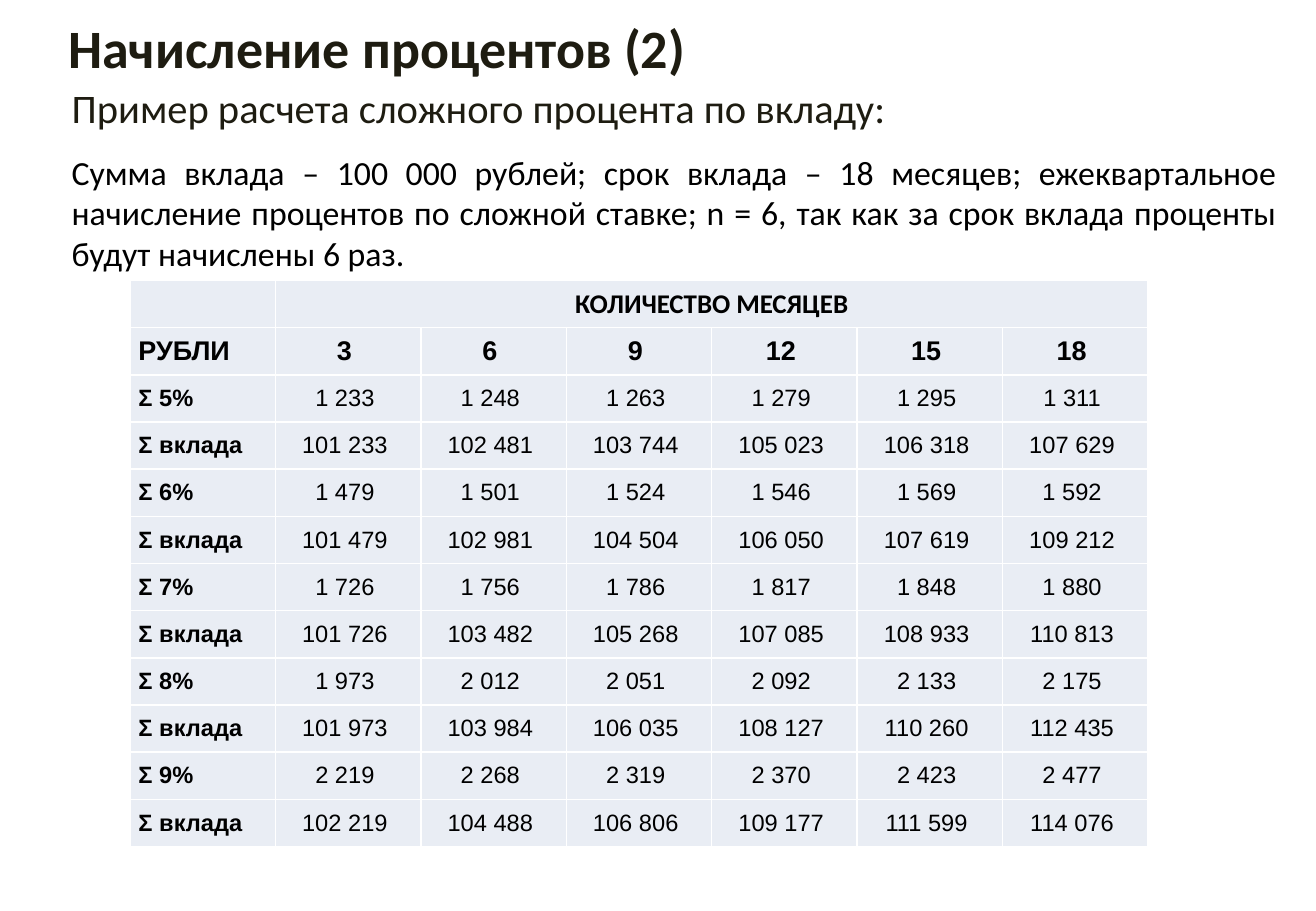
from lxml import etree
from pptx import Presentation
from pptx import util as u
from pptx.dml.color import RGBColor
from pptx.enum import text
from pptx.oxml import ns

HEADING_COLOR = "1E1C11"
BLACK = "000000"
CELL_FILL = "E9EDF4"
BORDER_COLOR = "FFFFFF"
COLUMN_WIDTH = 8.38 / 7
ROW_HEIGHT = 4.66 / 12

MONTHS = ["3", "6", "9", "12", "15", "18"]
RATES = [
    ("5%", ["1 233", "1 248", "1 263", "1 279", "1 295", "1 311"],
     ["101 233", "102 481", "103 744", "105 023", "106 318", "107 629"]),
    ("6%", ["1 479", "1 501", "1 524", "1 546", "1 569", "1 592"],
     ["101 479", "102 981", "104 504", "106 050", "107 619", "109 212"]),
    ("7%", ["1 726", "1 756", "1 786", "1 817", "1 848", "1 880"],
     ["101 726", "103 482", "105 268", "107 085", "108 933", "110 813"]),
    ("8%", ["1 973", "2 012", "2 051", "2 092", "2 133", "2 175"],
     ["101 973", "103 984", "106 035", "108 127", "110 260", "112 435"]),
    ("9%", ["2 219", "2 268", "2 319", "2 370", "2 423", "2 477"],
     ["102 219", "104 488", "106 806", "109 177", "111 599", "114 076"]),
]
CONDITIONS = (
    "Сумма вклада – 100 000 рублей; срок вклада – 18 месяцев; ежеквартальное "
    "начисление процентов по сложной ставке; n = 6, так как за срок вклада "
    "проценты будут начислены 6 раз."
)


def color(hex_value):
    return RGBColor.from_string(hex_value)


def place(shape, left, top, width, height):
    shape.left, shape.top = u.Inches(left), u.Inches(top)
    shape.width, shape.height = u.Inches(width), u.Inches(height)


def set_font(paragraph, name, size, hex_value, bold=False):
    font = paragraph.font
    font.name, font.size, font.bold = name, u.Pt(size), bold
    font.color.rgb = color(hex_value)


def remove_bullet(paragraph):
    properties = paragraph._p.get_or_add_pPr()
    properties.set("marL", "0")
    properties.set("indent", "0")
    etree.SubElement(properties, ns.qn("a:buNone"))


def add_title(slide):
    title = slide.shapes.title
    place(title, 0.46, 0.13, 10.37, 0.57)
    frame = title.text_frame
    frame.text = "Начисление процентов (2)"
    frame.auto_size = text.MSO_AUTO_SIZE.NONE
    frame.vertical_anchor = text.MSO_ANCHOR.TOP
    paragraph = frame.paragraphs[0]
    paragraph.alignment = text.PP_ALIGN.LEFT
    paragraph.line_spacing = 0.9
    paragraph.space_before = u.Pt(10)
    set_font(paragraph, "Calibri", 32, HEADING_COLOR, True)


def add_body(slide):
    body = slide.placeholders[1]
    place(body, 0.49, 0.63, 10.12, 6.36)
    frame = body.text_frame
    frame.text = "Пример расчета сложного процента по вкладу:\n" + CONDITIONS
    frame.auto_size = text.MSO_AUTO_SIZE.NONE
    styles = [(24, HEADING_COLOR), (20, BLACK)]
    for paragraph, (size, hex_value) in zip(frame.paragraphs, styles):
        paragraph.alignment = text.PP_ALIGN.JUSTIFY
        paragraph.space_before = paragraph.space_after = u.Pt(6)
        remove_bullet(paragraph)
        set_font(paragraph, "Calibri", size, hex_value)


def add_borders(cell):
    properties = cell._tc.get_or_add_tcPr()
    for side in ("a:lnL", "a:lnR", "a:lnT", "a:lnB"):
        line = etree.SubElement(properties, ns.qn(side), w=str(u.Pt(1)))
        fill = etree.SubElement(line, ns.qn("a:solidFill"))
        etree.SubElement(fill, ns.qn("a:srgbClr"), val=BORDER_COLOR)


def format_cell(cell, row, column):
    add_borders(cell)
    cell.fill.solid()
    cell.fill.fore_color.rgb = color(CELL_FILL)
    cell.margin_left = cell.margin_right = u.Inches(0.07)
    cell.margin_top = cell.margin_bottom = 0
    cell.vertical_anchor = text.MSO_ANCHOR.MIDDLE
    paragraph = cell.text_frame.paragraphs[0]
    paragraph.alignment = text.PP_ALIGN.CENTER if column else text.PP_ALIGN.LEFT
    name = "Arial" if row else "Calibri"
    set_font(paragraph, name, 16 if row < 2 else 14, BLACK, row < 2 or column == 0)


def add_interest_table(slide):
    rows = [["РУБЛИ"] + MONTHS]
    for rate, interest, deposit in RATES:
        rows += [[f"Σ {rate}"] + interest, ["Σ вклада"] + deposit]
    row_count, column_count = len(rows) + 1, len(MONTHS) + 1
    table = slide.shapes.add_table(
        row_count, column_count, u.Inches(1.07), u.Inches(2.31),
        u.Inches(COLUMN_WIDTH * column_count), u.Inches(ROW_HEIGHT * row_count),
    ).table
    table.cell(0, 1).merge(table.cell(0, column_count - 1))
    table.cell(0, 1).text = "КОЛИЧЕСТВО МЕСЯЦЕВ"
    for row, values in enumerate(rows, 1):
        for column, value in enumerate(values):
            table.cell(row, column).text = f"{value} " if column else value
    for row in range(row_count):
        for column in range(column_count):
            format_cell(table.cell(row, column), row, column)


def main():
    presentation = Presentation()
    presentation.slide_width = u.Inches(10.83)
    presentation.slide_height = u.Inches(7.5)
    slide = presentation.slides.add_slide(presentation.slide_layouts[1])
    add_body(slide)
    add_interest_table(slide)
    add_title(slide)
    presentation.save("out.pptx")


if __name__ == "__main__":
    main()
